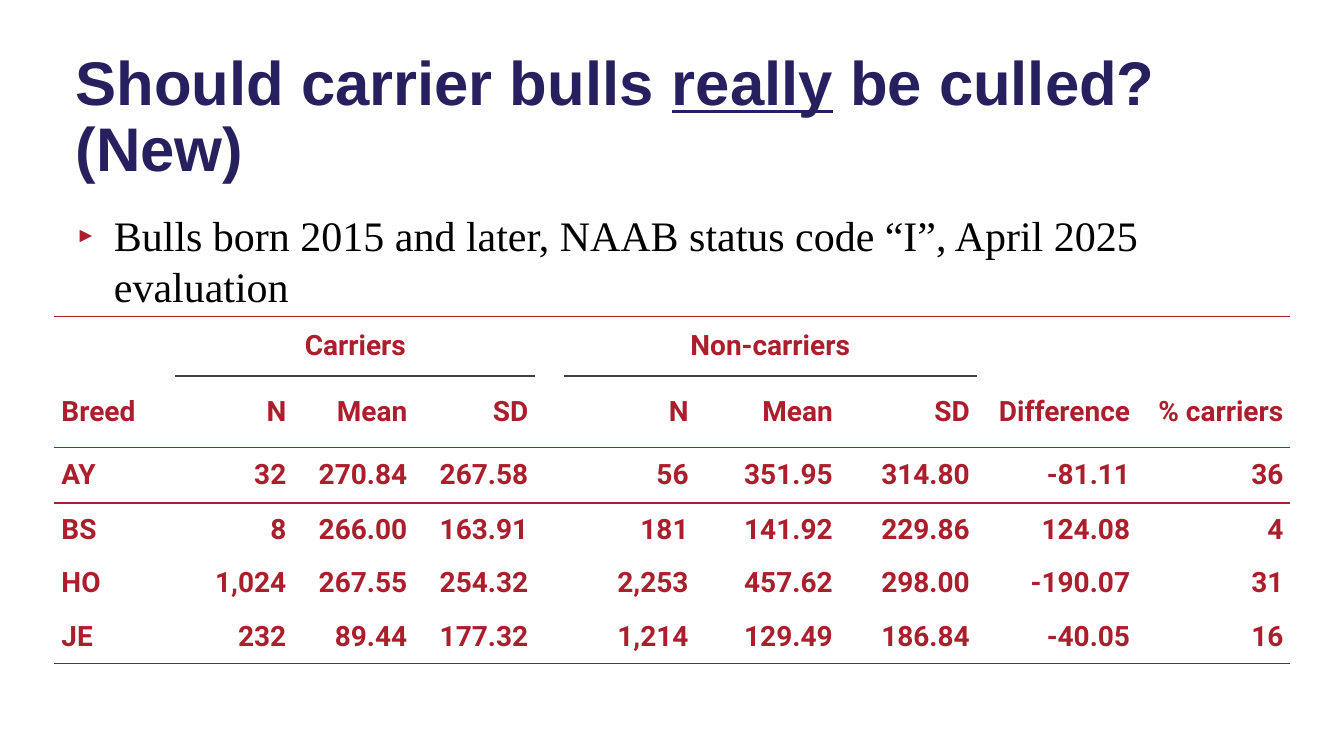
from lxml import etree
from pptx import Presentation
from pptx.dml.color import RGBColor
from pptx.enum.text import MSO_ANCHOR, MSO_AUTO_SIZE, PP_ALIGN
from pptx.oxml.ns import qn
from pptx.util import Inches, Pt

LEFT, CENTER, RIGHT = PP_ALIGN.LEFT, PP_ALIGN.CENTER, PP_ALIGN.RIGHT
MIDDLE, TOP = MSO_ANCHOR.MIDDLE, MSO_ANCHOR.TOP
NO_AUTOFIT = MSO_AUTO_SIZE.NONE

NAVY = RGBColor(0x26, 0x20, 0x5E)
CRIMSON = RGBColor(0xAB, 0x1E, 0x2C)
BLACK = RGBColor(0, 0, 0)
CHARCOAL = RGBColor(0x40, 0x40, 0x40)

SLIDE_W, SLIDE_H = Inches(13.33), Inches(7.5)
MARGIN, CONTENT_W = Inches(0.65), Inches(12)
PLAIN_TABLE = "{2D5ABB26-0587-4C30-8999-92F81FD0307C}"

# Table grid, in inches; the narrow column separates the two groups
COLUMNS = [1.2, 1.17, 1.2, 1.2, 0.28, 1.31, 1.43, 1.36, 1.59, 1.52]
ROWS = [0.59, 0.71, 0.55, 0.53, 0.53, 0.53]
GROUPS = {"Carriers": range(1, 4), "Non-carriers": range(5, 8)}
BULL_MERIT = [
    ["Breed", "N", "Mean", "SD", "", "N", "Mean", "SD", "Difference", "% carriers"],
    ["AY", "32", "270.84", "267.58", "", "56", "351.95", "314.80", "-81.11", "36"],
    ["BS", "8", "266.00", "163.91", "", "181", "141.92", "229.86", "124.08", "4"],
    ["HO", "1,024", "267.55", "254.32", "", "2,253", "457.62", "298.00", "-190.07", "31"],
    ["JE", "232", "89.44", "177.32", "", "1,214", "129.49", "186.84", "-40.05", "16"],
]


def style(font, name, size, color, bold=False):
    font.name, font.size, font.bold = name, Pt(size), bold
    font.color.rgb = color


def place(placeholder, top, height, anchor):
    placeholder.left, placeholder.top = MARGIN, top
    placeholder.width, placeholder.height = CONTENT_W, height
    frame = placeholder.text_frame
    frame.word_wrap = True
    frame.auto_size = NO_AUTOFIT
    frame.vertical_anchor = anchor
    return frame.paragraphs[0]


def write_title(title, parts):
    """Fill the title from (text, underlined) pairs."""
    heading = place(title, Inches(0.32), Inches(1.71), MIDDLE)
    heading.alignment, heading.line_spacing = LEFT, 0.9
    for text, underlined in parts:
        run = heading.add_run()
        run.text = text
        style(run.font, "Arial", 44, NAVY, bold=True)
        run.font.underline = underlined


def write_bullet(body, text):
    item = place(body, Inches(2.03), Inches(4.55), TOP)
    item.text = text
    item.alignment, item.space_before = LEFT, Pt(0)
    props = item._p.get_or_add_pPr()
    props.set("marL", str(Inches(0.38)))
    props.set("indent", str(-Inches(0.38)))
    color = etree.SubElement(props, qn("a:buClr"))
    etree.SubElement(color, qn("a:srgbClr"), val=str(CRIMSON))
    etree.SubElement(props, qn("a:buSzPct"), val="50000")
    etree.SubElement(props, qn("a:buFont"), typeface="Arial")
    etree.SubElement(props, qn("a:buChar"), char="►")
    style(item.runs[0].font, "Times New Roman", 30, BLACK)


def fill_cell(cell, text, alignment):
    cell.text = text
    cell.vertical_anchor = MIDDLE
    cell.margin_left = cell.margin_right = Inches(0.07)
    cell.margin_top = cell.margin_bottom = 0
    label = cell.text_frame.paragraphs[0]
    label.alignment = alignment
    style(label.font, "Roboto", 20, CRIMSON, bold=True)
    for run in label.runs:
        style(run.font, "Roboto", 20, CRIMSON, bold=True)


def rule(table, row, columns, side, color):
    """Draw a 1 pt border on one side ("lnT" or "lnB") of a run of cells."""
    for column in columns:
        props = table.cell(row, column)._tc.get_or_add_tcPr()
        line = etree.Element(qn("a:" + side), w=str(Pt(1)))
        solid = etree.SubElement(line, qn("a:solidFill"))
        etree.SubElement(solid, qn("a:srgbClr"), val=str(color))
        props.insert(0, line)


def add_merit_table(slide):
    table = slide.shapes.add_table(
        len(ROWS), len(COLUMNS), Inches(0.54), Inches(3.14),
        Inches(sum(COLUMNS)), Inches(sum(ROWS))).table
    table.first_row = table.horz_banding = False
    table._tbl.tblPr.find(qn("a:tableStyleId")).text = PLAIN_TABLE
    for column, width in zip(table.columns, COLUMNS):
        column.width = Inches(width)
    for row, height in zip(table.rows, ROWS):
        row.height = Inches(height)

    # Text: an empty row for the group heads, then the headings and figures
    for r, values in enumerate([[""] * len(COLUMNS)] + BULL_MERIT):
        for c, value in enumerate(values):
            cell = table.cell(r, c)
            cell.fill.background()
            fill_cell(cell, value, RIGHT if c else LEFT)
    for group, span in GROUPS.items():
        head = table.cell(0, span[0])
        head.merge(table.cell(0, span[-1]))
        fill_cell(head, group, CENTER)

    # Rules
    full_width = range(len(COLUMNS))
    for span in GROUPS.values():
        rule(table, 0, span, "lnB", CHARCOAL)
    rule(table, 0, full_width, "lnT", CRIMSON)
    for row in (1, 2):
        rule(table, row, full_width, "lnB", CRIMSON)
    rule(table, len(ROWS) - 1, full_width, "lnB", CHARCOAL)


def main():
    deck = Presentation()
    deck.slide_width, deck.slide_height = SLIDE_W, SLIDE_H
    slide = deck.slides.add_slide(deck.slide_layouts[1])
    write_title(slide.shapes.title, [
        ("Should carrier bulls ", False), ("really", True), (" be culled? (New)", False)])
    write_bullet(slide.placeholders[1],
                 "Bulls born 2015 and later, NAAB status code “I”, April 2025 evaluation")
    add_merit_table(slide)
    deck.save("out.pptx")


if __name__ == "__main__":
    main()
